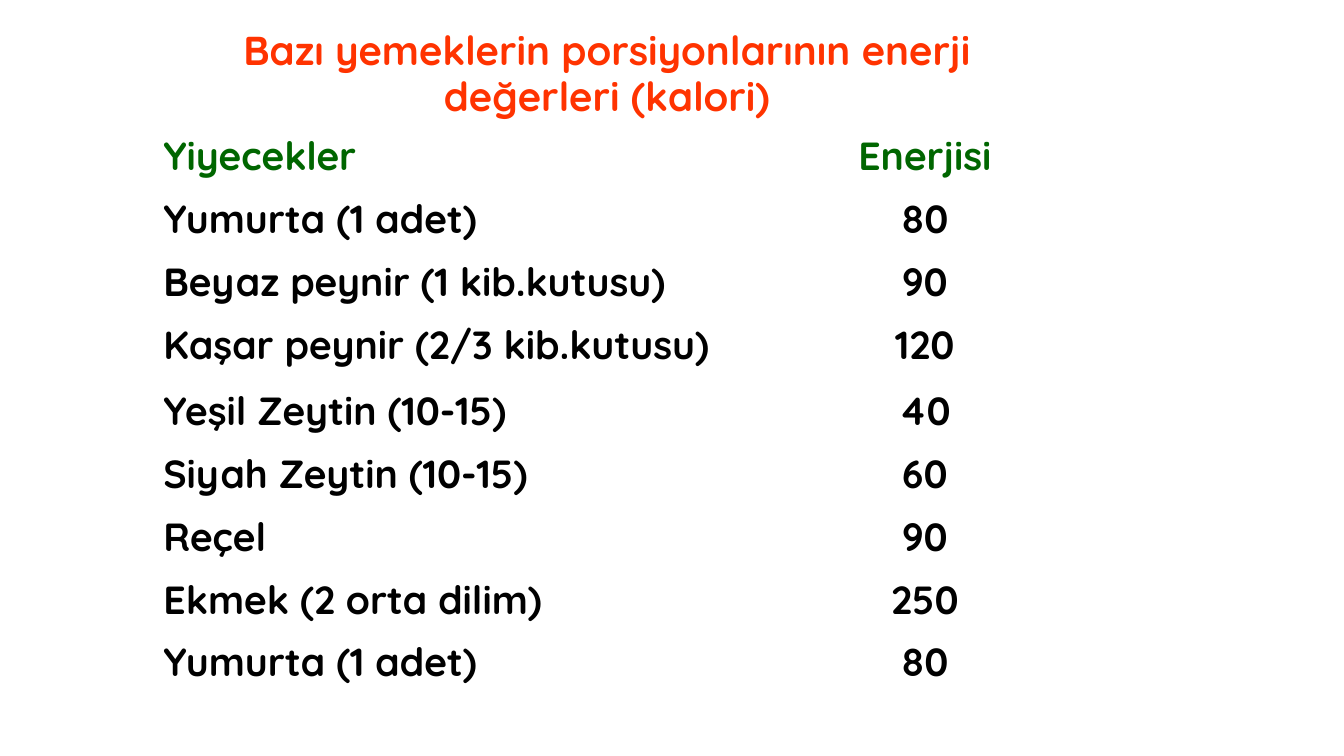
from dataclasses import dataclass

from pptx import Presentation
from pptx.dml.color import RGBColor
from pptx.enum.text import MSO_ANCHOR, MSO_AUTO_SIZE, PP_ALIGN
from pptx.text.text import TextFrame
from pptx.util import Pt

FONT = "Quicksand"
WHITE = RGBColor(0xFF, 0xFF, 0xFF)
ORANGE = RGBColor(0xFF, 0x33, 0x00)
GREEN = RGBColor(0x00, 0x66, 0x00)
BLACK = RGBColor(0x00, 0x00, 0x00)

FOOD_WIDTH, ENERGY_WIDTH = 454.3, 193.7
ROW_HEIGHTS = [45.2, 45.2, 44.9, 47.3] + [44.9] * 5


@dataclass(frozen=True)
class Portion:
    food: str
    energy: str
    color: RGBColor = BLACK


PORTIONS = [
    Portion("Yiyecekler", "Enerjisi", GREEN),
    Portion("Yumurta (1 adet)", "80"),
    Portion("Beyaz peynir (1 kib.kutusu)", "90"),
    Portion("Kaşar peynir (2/3 kib.kutusu)", "120"),
    Portion("Yeşil Zeytin (10-15)", "40"),
    Portion("Siyah Zeytin (10-15)", "60"),
    Portion("Reçel", "90"),
    Portion("Ekmek (2 orta dilim)", "250"),
    Portion("Yumurta (1 adet)", "80"),
]


def write_text(frame: TextFrame, text: str, *, color: RGBColor, size: float = 28,
               align: PP_ALIGN = PP_ALIGN.LEFT, line_spacing: float = 1.0) -> None:
    frame.word_wrap = True
    paragraph = frame.paragraphs[0]
    paragraph.alignment = align
    paragraph.line_spacing = line_spacing
    run = paragraph.add_run()
    run.text = text
    run.font.name = FONT
    run.font.size = Pt(size)
    run.font.bold = True
    run.font.color.rgb = color


def add_heading(slide) -> None:
    heading = slide.shapes.title
    heading.left, heading.top = Pt(120), Pt(12)
    heading.width, heading.height = Pt(627), Pt(78)
    frame = heading.text_frame
    frame.auto_size = MSO_AUTO_SIZE.NONE
    frame.vertical_anchor = MSO_ANCHOR.BOTTOM
    write_text(frame, "Bazı yemeklerin porsiyonlarının enerji değerleri (kalori)",
               color=ORANGE, size=28.8, align=PP_ALIGN.CENTER, line_spacing=0.95)


def add_calorie_table(slide) -> None:
    table = slide.shapes.add_table(
        len(PORTIONS), 2, Pt(109.5), Pt(90),
        Pt(FOOD_WIDTH + ENERGY_WIDTH), Pt(sum(ROW_HEIGHTS))).table
    table.first_row = False
    table.horz_banding = False
    for column, width in zip(table.columns, (FOOD_WIDTH, ENERGY_WIDTH)):
        column.width = Pt(width)
    for row, height, portion in zip(table.rows, ROW_HEIGHTS, PORTIONS):
        row.height = Pt(height)
        entries = ((portion.food, PP_ALIGN.LEFT), (portion.energy, PP_ALIGN.CENTER))
        for cell, (text, align) in zip(row.cells, entries):
            cell.fill.background()
            write_text(cell.text_frame, text, color=portion.color, align=align)


def main() -> None:
    deck = Presentation()
    deck.slide_width, deck.slide_height = Pt(960), Pt(540)
    slide = deck.slides.add_slide(deck.slide_layouts.get_by_name("Title Only"))
    slide.background.fill.solid()
    slide.background.fill.fore_color.rgb = WHITE
    add_heading(slide)
    add_calorie_table(slide)
    deck.save("out.pptx")


if __name__ == "__main__":
    main()
